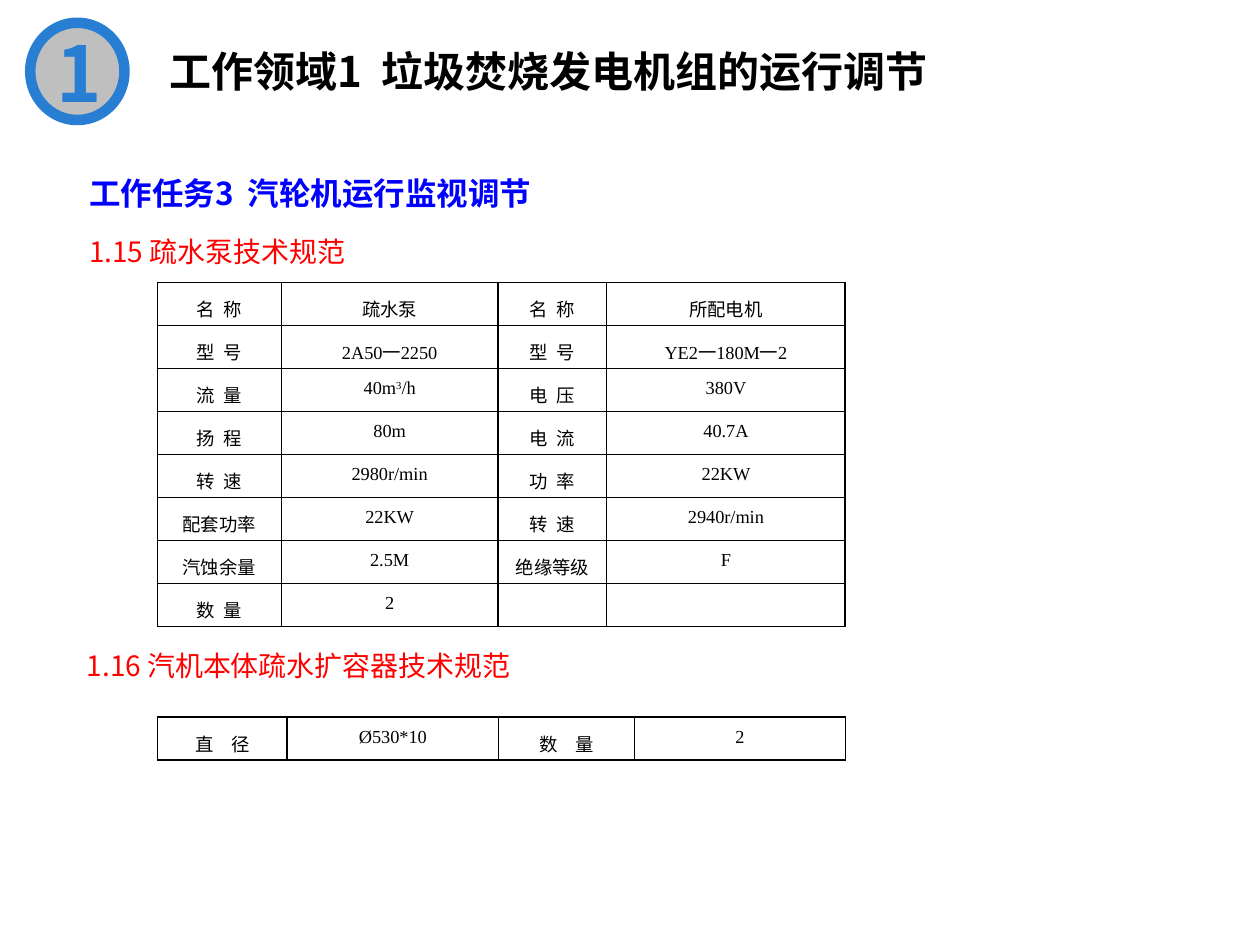
from lxml import etree
from pptx import Presentation
from pptx.dml.color import RGBColor
from pptx.enum.shapes import MSO_SHAPE
from pptx.enum.text import MSO_ANCHOR, MSO_AUTO_SIZE, PP_ALIGN
from pptx.oxml.ns import qn
from pptx.util import Cm, Pt

LEFT, CENTER = PP_ALIGN.LEFT, PP_ALIGN.CENTER
TOP, MIDDLE = MSO_ANCHOR.TOP, MSO_ANCHOR.MIDDLE
OVAL = MSO_SHAPE.OVAL
GROW, FIXED = MSO_AUTO_SIZE.SHAPE_TO_FIT_TEXT, MSO_AUTO_SIZE.NONE
TITLE_ONLY = 5

SANS, SERIF = "Noto Sans CJK SC", "Times New Roman"
BLACK, BLUE, RED = "000000", "0000FF", "FF0000"
BADGE_BLUE, BADGE_GREY = "287ED3", "BFBFBF"

TABLE_LEFT, ROW_HEIGHT = 3.17, 0.867

# A caret marks the one raised digit that follows it
PUMP_ROWS = [
    ["名 称", "疏水泵", "名 称", "所配电机"],
    ["型 号", "2A50一2250", "型 号", "YE2一180M一2"],
    ["流 量", "40m^3/h", "电 压", "380V"],
    ["扬 程", "80m", "电 流", "40.7A"],
    ["转 速", "2980r/min", "功 率", "22KW"],
    ["配套功率", "22KW", "转 速", "2940r/min"],
    ["汽蚀余量", "2.5M", "绝缘等级", "F"],
    ["数 量", "2", "", ""],
]
EXPANDER_ROWS = [["直 径", "Ø530*10", "数 量", "2"]]


def color(hex_value):
    return RGBColor.from_string(hex_value)


def split_runs(text, gap):
    """Split text into runs with attributes: widened spaces, raised digits."""
    if "^" in text:
        base, raised = text.split("^")
        return [(base, {}), (raised[0], {"baseline": "30000"}), (raised[1:], {})]
    if gap and " " in text:
        before, after = text.split(" ")
        return [(before, {}), (" ", {"spc": str(round(gap * 100))}), (after, {})]
    return [(text, {})]


def write_text(frame, text, size, font=SANS, fill=BLACK, bold=False,
               align=LEFT, spacing=None, gap=0):
    paragraph = frame.paragraphs[0]
    paragraph.alignment = align
    if spacing:
        paragraph.line_spacing = spacing
    for part, attributes in split_runs(text, gap):
        run = paragraph.add_run()
        run.text = part
        run.font.size, run.font.bold, run.font.name = Pt(size), bold, font
        run.font.color.rgb = color(fill)
        properties = run.font._element
        for key, value in attributes.items():
            properties.set(key, value)
        etree.SubElement(properties, qn("a:ea")).set("typeface", SANS)


def place(shape, left, top, width, height):
    shape.left, shape.top = Cm(left), Cm(top)
    shape.width, shape.height = Cm(width), Cm(height)


def add_title(slide, text):
    title = slide.shapes.title
    place(title, 3.17, 0.79, 16.97, 1.27)
    title.text_frame.vertical_anchor = TOP
    title.text_frame.auto_size = FIXED
    write_text(title.text_frame, text, 24, bold=True, gap=5.4)


def add_badge(slide, number):
    badge = slide.shapes.add_shape(OVAL, Cm(0.61), Cm(0.46), Cm(1.9), Cm(1.96))
    badge.shadow.inherit = False
    badge.fill.solid()
    badge.fill.fore_color.rgb = color(BADGE_GREY)
    badge.line.color.rgb = color(BADGE_BLUE)
    badge.line.width = Pt(6)
    badge.text_frame.vertical_anchor = MIDDLE
    write_text(badge.text_frame, number, 44, fill=BADGE_BLUE, bold=True,
               align=CENTER)


def add_heading(slide, text, left, top, width, height, wrap=True, **text_format):
    box = slide.shapes.add_textbox(Cm(left), Cm(top), Cm(width), Cm(height))
    box.text_frame.word_wrap = wrap
    box.text_frame.auto_size = GROW
    write_text(box.text_frame, text, **text_format)


def add_borders(cell):
    properties = cell._tc.get_or_add_tcPr()
    for side in ("lnL", "lnR", "lnT", "lnB"):
        line = etree.SubElement(properties, qn(f"a:{side}"), w=str(Pt(1)))
        solid = etree.SubElement(line, qn("a:solidFill"))
        etree.SubElement(solid, qn("a:srgbClr"), val=BLACK)


def add_spec_table(slide, rows, top, column_widths, gap):
    table = slide.shapes.add_table(
        len(rows), len(column_widths), Cm(TABLE_LEFT), Cm(top),
        Cm(sum(column_widths)), Cm(ROW_HEIGHT * len(rows))).table
    table.first_row = table.horz_banding = False
    for column, width in zip(table.columns, column_widths):
        column.width = Cm(width)
    for row, values in zip(table.rows, rows):
        row.height = Cm(ROW_HEIGHT)
        for cell, value in zip(row.cells, values):
            cell.margin_left = cell.margin_right = Cm(0.18)
            cell.margin_top = cell.margin_bottom = 0
            add_borders(cell)
            cell.fill.background()
            if value:
                write_text(cell.text_frame, value, 10.5, font=SERIF,
                           align=CENTER, spacing=1.5, gap=gap)


def main():
    deck = Presentation()
    deck.slide_width, deck.slide_height = Cm(25.4), Cm(19.05)
    slide = deck.slides.add_slide(deck.slide_layouts[TITLE_ONLY])

    # Header
    add_badge(slide, "1")
    add_title(slide, "工作领域1 垃圾焚烧发电机组的运行调节")
    add_heading(slide, "工作任务3 汽轮机运行监视调节", 1.55, 3.15, 9.88, 1.12,
                wrap=False, size=18, fill=BLUE, bold=True, spacing=Pt(28), gap=4)

    # Drain pump section
    section = {"size": 16, "fill": RED, "spacing": 1.5}
    add_heading(slide, "1.15 疏水泵技术规范", 1.55, 4.27, 22.5, 2.16, **section)
    add_spec_table(slide, PUMP_ROWS, 5.69, [2.5, 4.37, 2.19, 4.81], gap=2.6)

    # Drain expander section
    add_heading(slide, "1.16 汽机本体疏水扩容器技术规范", 1.5, 12.62, 22.5, 2.16,
                **section)
    add_spec_table(slide, EXPANDER_ROWS, 14.45, [2.62, 4.26, 2.74, 4.25], gap=7.9)

    deck.save("out.pptx")


if __name__ == "__main__":
    main()
